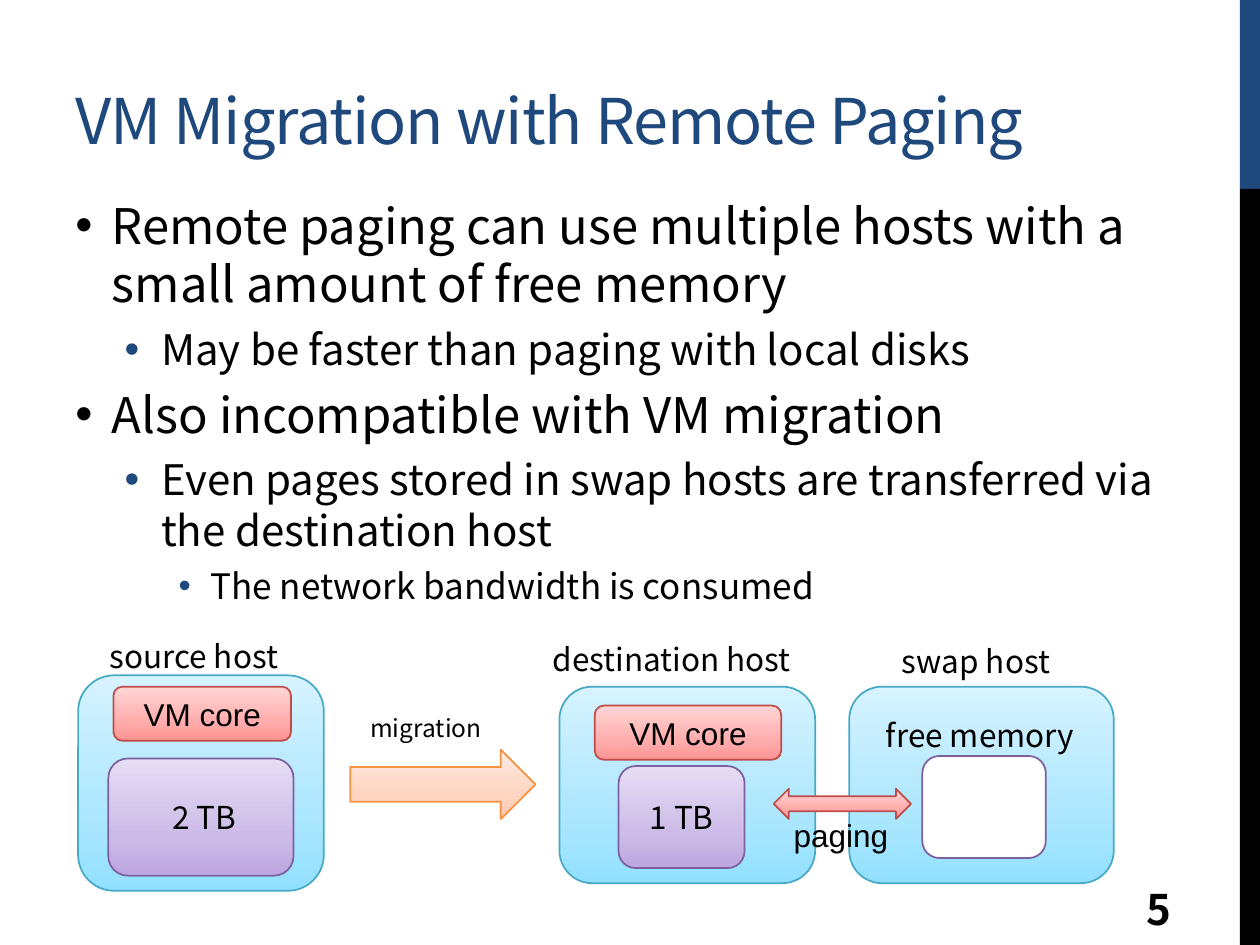
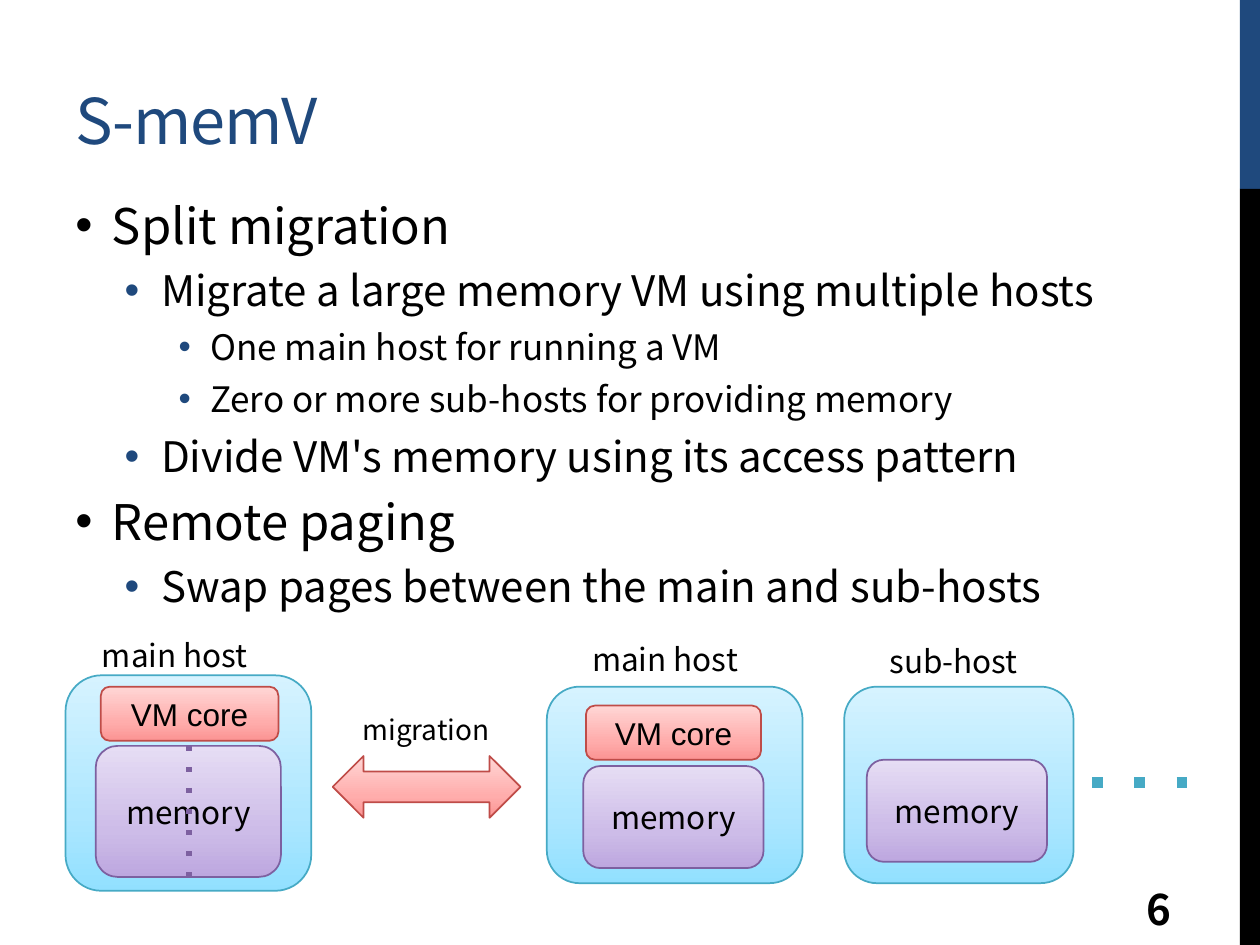
from lxml import etree
from pptx import Presentation
from pptx import util as u
from pptx.dml.color import RGBColor
from pptx.enum import shapes, text
from pptx.oxml.ns import qn

PX = 9144  # 100 px to the inch
SANS, ARIAL = "Noto Sans CJK JP", "Arial"
COLORS = {"navy": "1F497D", "black": "000000", "white": "FFFFFF",
          "blue": "46AAC5", "orange": "F69240", "purple": "7D60A0", "red": "BF4C48"}
# Gradient colours from bottom to top, keyed by the outline colour
SHADES = {"blue": ("92E0FF", "ADE7FF", "D6F3FF"),
          "orange": ("FFC7AC", "FFD5C2", "FFEAE1"),
          "purple": ("BDA7DF", "CDBCE8", "E6DDF4"),
          "red": ("FB9493", "FFADAC", "FFD6D5")}
STOPS = (0, 35000, 100000)
# Text size, left margin, hanging indent, bullet colour for each level
LEVELS = ((28, 29, 29, "black"), (24, 68, 29, "navy"), (20, 107, 25, "navy"))
KIND = shapes.MSO_SHAPE
CENTER = text.PP_ALIGN.CENTER


def rgb(name):
    return RGBColor.from_string(COLORS[name])


def emu(*px):
    return [u.Emu(v * PX) for v in px]


def style(p, size, font=SANS, color="black", bold=False):
    for r in p.runs:
        r.font.size, r.font.name, r.font.bold = u.Pt(size), font, bold
        r.font.color.rgb = rgb(color)
        etree.SubElement(r._r.get_or_add_rPr(), qn("a:ea"), typeface=font)


def add_text(slide, box, content, size=18, font=SANS, color="black", bold=False,
             wrap=True, grow=False, anchor=text.MSO_ANCHOR.TOP, align=None):
    tf = slide.shapes.add_textbox(*emu(*box)).text_frame
    tf.word_wrap, tf.vertical_anchor = wrap, anchor
    if grow:
        tf.auto_size = text.MSO_AUTO_SIZE.SHAPE_TO_FIT_TEXT
    p = tf.paragraphs[0]
    p.text, p.alignment = content, align
    style(p, size, font, color, bold)
    return p


def add_label(slide, box, content, **options):
    return add_text(slide, box, content, wrap=False, grow=True, **options)


def add_block(slide, kind, box, color, content="", font=SANS, plain=False):
    """Outlined shape with a gradient (or plain white) fill and centred text."""
    sp = slide.shapes.add_shape(kind, *emu(*box))
    sp.shadow.inherit = False
    sp.line.color.rgb, sp.line.width = rgb(color), u.Pt(1)
    if plain:
        sp.fill.solid()
        sp.fill.fore_color.rgb = rgb("white")
    else:
        sp.fill.gradient()
        sp.fill.gradient_angle = 90
        stops = sp._element.spPr.find(".//" + qn("a:gsLst"))
        for old in list(stops):
            stops.remove(old)
        for pos, shade in zip(STOPS, SHADES[color]):
            gs = etree.SubElement(stops, qn("a:gs"), pos=str(pos))
            etree.SubElement(gs, qn("a:srgbClr"), val=shade)
    if content:
        tf = sp.text_frame
        tf.vertical_anchor = text.MSO_ANCHOR.MIDDLE
        p = tf.paragraphs[0]
        p.text, p.alignment = content, CENTER
        style(p, 18, font)
    return sp


def add_dots(slide, x1, y1, x2, y2, color, width):
    line = slide.shapes.add_connector(shapes.MSO_CONNECTOR.STRAIGHT, *emu(x1, y1, x2, y2))
    line.line.color.rgb, line.line.width = rgb(color), u.Pt(width)
    etree.SubElement(line.line._get_or_add_ln(), qn("a:prstDash"), val="dot")
    etree.SubElement(line._element.spPr, qn("a:effectLst"))


def add_host(slide, box, label, core=None, memory=None, content="", plain=False):
    """Host box; label, core and memory boxes are offsets from its corner."""
    x, y = box[:2]

    def inside(part):
        return (x + part[0], y + part[1], *part[2:])

    add_block(slide, KIND.ROUNDED_RECTANGLE, box, "blue")
    name, *place = label
    add_label(slide, inside((*place, 40)), name)
    add_block(slide, KIND.ROUNDED_RECTANGLE, inside(memory), "purple", content, plain=plain)
    if core:
        add_block(slide, KIND.ROUNDED_RECTANGLE, inside((*core, 43)), "red", "VM core", ARIAL)


def add_bullets(slide, box, items):
    tf = slide.shapes.add_textbox(*emu(*box)).text_frame
    tf.word_wrap = True
    for i, (level, content) in enumerate(items):
        p = tf.paragraphs[0] if i == 0 else tf.add_paragraph()
        size, margin, hang, color = LEVELS[level]
        p.text, p.level, p.space_before = content, level, u.Pt(6)
        style(p, size)
        pPr = p._p.get_or_add_pPr()
        pPr.set("marL", str(margin * PX))
        pPr.set("indent", str(-hang * PX))
        clr = etree.SubElement(pPr, qn("a:buClr"))
        etree.SubElement(clr, qn("a:srgbClr"), val=COLORS[color])
        etree.SubElement(pPr, qn("a:buFont"), typeface=ARIAL)
        etree.SubElement(pPr, qn("a:buChar"), char="•")


def add_slide(prs, title, number, items):
    """Side band, title, bullets and page number shared by the slides."""
    slide = prs.slides.add_slide(prs.slide_layouts[6])
    for top, height, color in ((0, 150, "navy"), (150, 600, "black")):
        sp = slide.shapes.add_shape(KIND.RECTANGLE, *emu(984, top, 16, height))
        sp.shadow.inherit = False
        sp.fill.solid()
        sp.fill.fore_color.rgb = rgb(color)
        sp.line.fill.background()
    p = add_text(slide, (50, 36, 891, 94), title, 36, color="navy",
                 anchor=text.MSO_ANCHOR.BOTTOM)
    p.runs[0]._r.get_or_add_rPr().set("spc", "-60")
    add_bullets(slide, (50, 150, 891, 520), items)
    add_text(slide, (900, 701, 85, 40), str(number), 24, bold=True,
             anchor=text.MSO_ANCHOR.MIDDLE)
    return slide


def remote_paging_slide(prs):
    slide = add_slide(prs, "VM Migration with Remote Paging", 5, (
        (0, "Remote paging can use multiple hosts with a small amount of free memory"),
        (1, "May be faster than paging with local disks"),
        (0, "Also incompatible with VM migration"),
        (1, "Even pages stored in swap hosts are transferred via the destination host"),
        (2, "The network bandwidth is consumed")))
    # Hosts
    add_host(slide, (674, 545, 210, 156), ("swap host", 32, -40, 145),
             memory=(58, 55, 98, 81), plain=True)
    add_host(slide, (62, 536, 195, 171), ("source host", 15, -35, 163),
             core=(28, 9, 141), memory=(24, 66, 147, 93), content=" 2 TB")
    add_host(slide, (444, 545, 203, 156), ("destination host", -15, -42, 217),
             core=(28, 15, 148), memory=(47, 63, 100, 81), content="1 TB")
    # Transfers
    add_block(slide, KIND.RIGHT_ARROW, (278, 595, 147, 55), "orange")
    add_text(slide, (284, 561, 134, 34), "migration", 14, grow=True)
    add_block(slide, KIND.LEFT_RIGHT_ARROW, (614, 626, 109, 24), "red")
    add_label(slide, (688, 563, 180, 40), "free memory", align=CENTER)
    add_label(slide, (620, 643, 96, 40), "paging", font=ARIAL)


def split_migration_slide(prs):
    slide = add_slide(prs, "S-memV", 6, (
        (0, "Split migration"),
        (1, "Migrate a large memory VM using multiple hosts"),
        (2, "One main host for running a VM"),
        (2, "Zero or more sub-hosts for providing memory"),
        (1, "Divide VM's memory using its access pattern"),
        (0, "Remote paging"),
        (1, "Swap pages between the main and sub-hosts")))
    # Hosts
    add_host(slide, (670, 545, 182, 156), ("sub-host", 26, -40, 128),
             memory=(18, 58, 143, 81), content="memory")
    add_host(slide, (52, 536, 195, 171), ("main host", 19, -36, 142),
             core=(28, 9, 141), memory=(24, 56, 147, 104), content="memory")
    add_host(slide, (434, 545, 203, 156), ("main host", 26, -42, 142),
             core=(31, 15, 139), memory=(29, 63, 143, 81), content="memory")
    # Further sub-hosts and the split through the memory
    add_dots(slide, 867, 621, 942, 621, "blue", 6)
    add_dots(slide, 150, 592, 150, 696, "purple", 3)
    # Transfer
    add_text(slide, (278, 561, 134, 37), "migration", 16, grow=True)
    add_block(slide, KIND.LEFT_RIGHT_ARROW, (264, 600, 149, 49), "red")


def main():
    prs = Presentation()
    prs.slide_width, prs.slide_height = emu(1000, 750)
    remote_paging_slide(prs)
    split_migration_slide(prs)
    prs.save("out.pptx")


if __name__ == "__main__":
    main()
